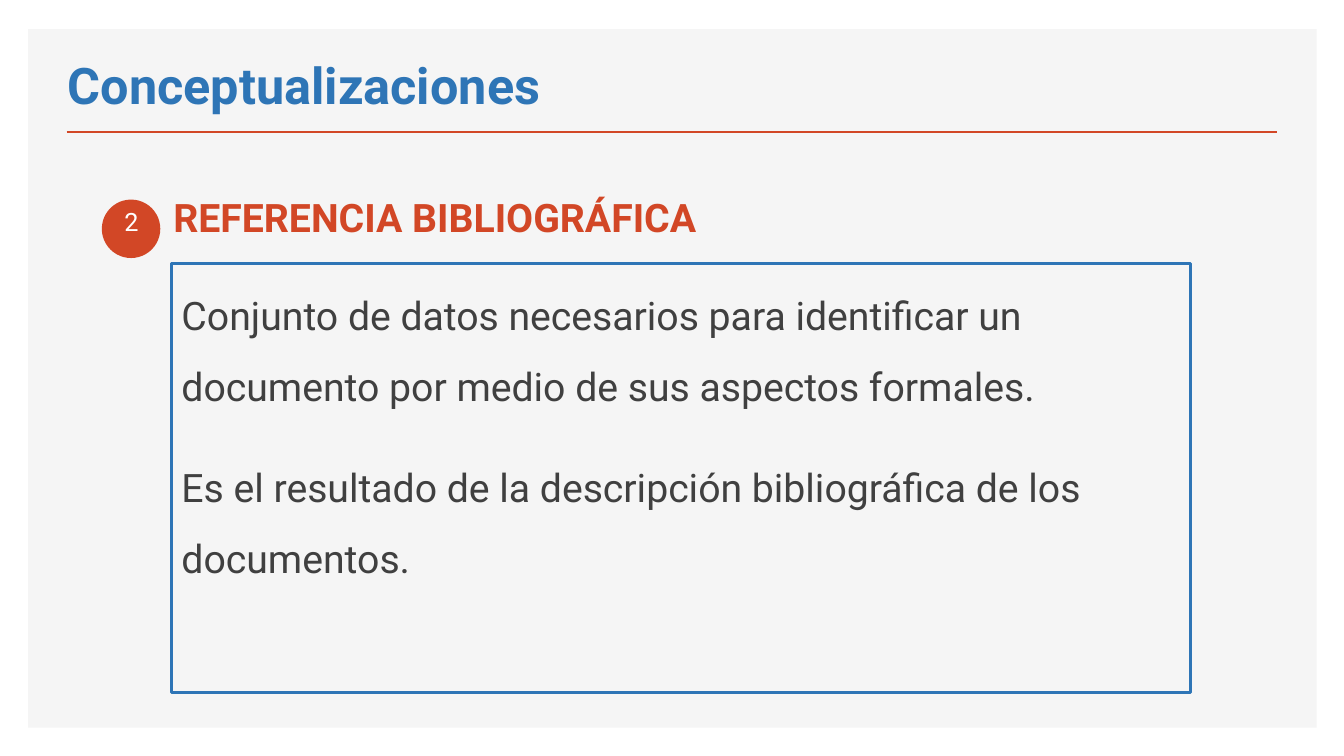
from dataclasses import dataclass

from lxml.etree import SubElement
from pptx import Presentation
from pptx.dml.color import RGBColor
from pptx.enum.shapes import MSO_CONNECTOR, MSO_SHAPE
from pptx.enum.text import MSO_ANCHOR, MSO_AUTO_SIZE, PP_ALIGN
from pptx.oxml.ns import qn
from pptx.shapes.autoshape import Shape
from pptx.text.text import TextFrame
from pptx.util import Length, Pt

SCALE = 9144
FONT = "Roboto"
COLORS = {
    "panel": "F5F5F5",
    "accent": "D24726",
    "blue": "2E75B6",
    "text": "404040",
    "white": "FFFFFF",
}


@dataclass(frozen=True)
class Box:
    left: int
    top: int
    width: int
    height: int


@dataclass(frozen=True)
class Style:
    size: int
    color: str
    bold: bool = False
    align: PP_ALIGN = PP_ALIGN.LEFT
    lead: float | Length | None = None
    before: int = 0
    after: int = 0


PANEL = Box(28, 29, 1278, 693)
TITLE = Box(57, 49, 857, 70)
BODY = Box(170, 261, 1011, 426)
DISC = Box(101, 198, 58, 58)
NUMBER = Box(91, 200, 79, 40)
HEADING = Box(152, 209, 629, 50)
RULE = Box(66, 131, 1201, 0)

TITLE_STYLE = Style(36, "blue", bold=True)
BODY_STYLE = Style(28, "text", lead=1.5, before=10, after=12)
NUMBER_STYLE = Style(18, "white", align=PP_ALIGN.CENTER)
HEADING_STYLE = Style(28, "accent", bold=True, lead=Pt(18), before=10, after=20)

POINTS = [
    "Conjunto de datos necesarios para identificar un documento "
    "por medio de sus aspectos formales.",
    "Es el resultado de la descripción bibliográfica de los documentos.",
]


def px(value: int) -> Length:
    return Length(value * SCALE)


def color(name: str) -> RGBColor:
    return RGBColor.from_string(COLORS[name])


def edges(box: Box) -> tuple[Length, Length, Length, Length]:
    return px(box.left), px(box.top), px(box.width), px(box.height)


def place(shape: Shape, box: Box) -> None:
    shape.left, shape.top, shape.width, shape.height = edges(box)


def write(frame: TextFrame, lines: list[str], style: Style,
          anchor: MSO_ANCHOR = MSO_ANCHOR.TOP) -> None:
    frame.word_wrap = True
    frame.auto_size = MSO_AUTO_SIZE.NONE
    frame.vertical_anchor = anchor
    for index, line in enumerate(lines):
        para = frame.add_paragraph() if index else frame.paragraphs[0]
        para.alignment = style.align
        para.line_spacing = style.lead
        para.space_before = Pt(style.before)
        para.space_after = Pt(style.after)
        run = para.add_run()
        run.text = line
        run.font.name = FONT
        run.font.size = Pt(style.size)
        run.font.bold = style.bold
        run.font.color.rgb = color(style.color)


def plain(frame: TextFrame) -> None:
    for para in frame.paragraphs:
        props = para._p.get_or_add_pPr()
        props.set("marL", "0")
        props.set("indent", "0")
        SubElement(props, qn("a:buNone"))


def solid(shapes, kind: MSO_SHAPE, box: Box, fill: str) -> Shape:
    shape = shapes.add_shape(kind, *edges(box))
    shape.shadow.inherit = False
    shape.fill.solid()
    shape.fill.fore_color.rgb = color(fill)
    shape.line.fill.background()
    return shape


def main() -> None:
    deck = Presentation()
    deck.slide_width, deck.slide_height = px(1333), px(750)
    slide = deck.slides.add_slide(deck.slide_layouts[1])
    shapes = slide.shapes
    title, body = shapes.title, slide.placeholders[1]

    panel = solid(shapes, MSO_SHAPE.RECTANGLE, PANEL, "panel")
    rule = shapes.add_connector(
        MSO_CONNECTOR.STRAIGHT, px(RULE.left), px(RULE.top),
        px(RULE.left + RULE.width), px(RULE.top))
    rule.line.color.rgb = color("accent")
    rule.line.width = Pt(2)
    SubElement(rule._element.spPr, qn("a:effectLst"))
    title._element.addprevious(panel._element)
    title._element.addprevious(rule._element)

    place(title, TITLE)
    write(title.text_frame, ["Conceptualizaciones"], TITLE_STYLE, MSO_ANCHOR.BOTTOM)

    place(body, BODY)
    body.line.color.rgb = color("blue")
    body.line.width = Pt(2.25)
    write(body.text_frame, POINTS, BODY_STYLE)
    plain(body.text_frame)

    badge = shapes.add_group_shape()
    solid(badge.shapes, MSO_SHAPE.OVAL, DISC, "accent")
    number = badge.shapes.add_textbox(*edges(NUMBER))
    write(number.text_frame, ["2"], NUMBER_STYLE)

    heading = shapes.add_textbox(*edges(HEADING))
    heading.text_frame.margin_left = px(20)
    write(heading.text_frame, ["REFERENCIA BIBLIOGRÁFICA"], HEADING_STYLE)

    deck.save("out.pptx")


if __name__ == "__main__":
    main()
